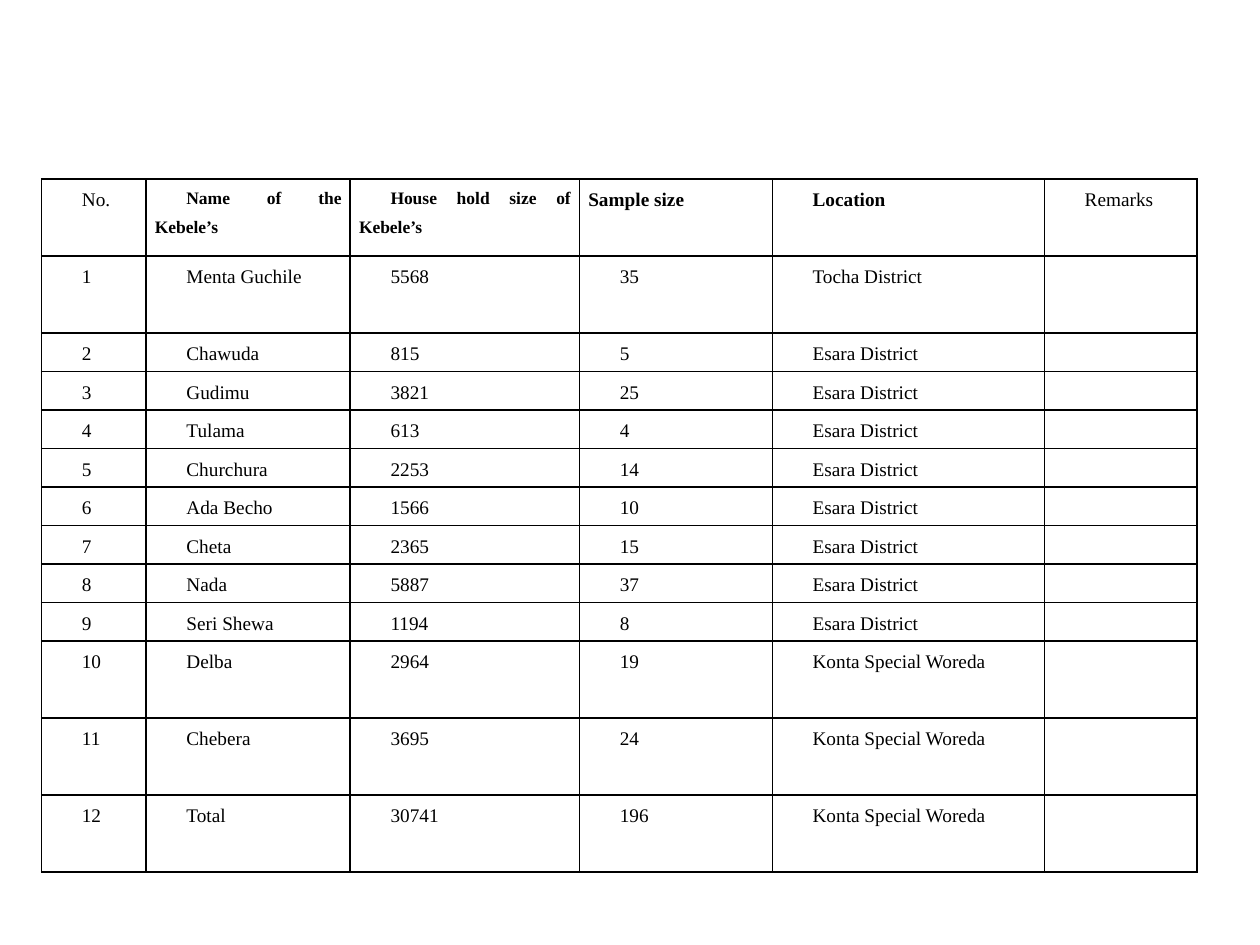
"""Build a slide with the table of sampled kebeles."""
from pptx import Presentation
from pptx import util as u
from pptx.dml.color import RGBColor
from pptx.enum import text
from pptx.oxml import parse_xml
from pptx.oxml.ns import nsdecls

BLACK = RGBColor(0, 0, 0)
FONT = "Times New Roman"
ESARA, KONTA = "Esara District", "Konta Special Woreda"

HEADS = [
    ("No.", 11, False, 0.25),
    ("Name of the Kebele’s", 10, True, 0.25),
    ("House hold size of Kebele’s", 10, True, 0.25),
    ("Sample size", 11, True, 0),
    ("Location", 11, True, 0.25),
    ("Remarks", 11, False, 0.25),
]
ROWS = [
    ("Menta Guchile", 5568, 35, "Tocha District"),
    ("Chawuda", 815, 5, ESARA),
    ("Gudimu", 3821, 25, ESARA),
    ("Tulama", 613, 4, ESARA),
    ("Churchura", 2253, 14, ESARA),
    ("Ada Becho", 1566, 10, ESARA),
    ("Cheta", 2365, 15, ESARA),
    ("Nada", 5887, 37, ESARA),
    ("Seri Shewa", 1194, 8, ESARA),
    ("Delba", 2964, 19, KONTA),
    ("Chebera", 3695, 24, KONTA),
    ("Total", 30741, 196, KONTA),
]
WIDTHS = [0.83, 1.62, 1.82, 1.53, 2.16, 1.21]
SPANS = [1 if row[3] == ESARA else 2 for row in ROWS]
LEFT, TOP, HIGH = 0.33, 1.42, 5.5


def frame(cell):
    """Draw the cell's four borders, clear its fill and set its margins."""
    props = cell._tc.get_or_add_tcPr()
    for side in "LRTB":
        props.append(parse_xml(
            f'<a:ln{side} {nsdecls("a")} w="{u.Pt(1)}"><a:solidFill>'
            f'<a:srgbClr val="{BLACK}"/></a:solidFill></a:ln{side}>'))
    cell.fill.background()
    cell.margin_left = cell.margin_right = u.Inches(0.07)
    cell.margin_top = cell.margin_bottom = 0


def write(cell, words, size=11, bold=False, indent=0.25):
    """Put one justified line of text in the cell."""
    para = cell.text_frame.paragraphs[0]
    para.text = str(words)
    para.alignment = text.PP_ALIGN.JUSTIFY
    para.line_spacing = 1.5
    para._p.get_or_add_pPr().set("indent", str(u.Inches(indent)))
    font = para.font
    font.name, font.size, font.bold = FONT, u.Pt(size), bold
    font.color.rgb = BLACK


def main():
    deck = Presentation()
    deck.slide_width, deck.slide_height = u.Inches(10), u.Inches(7.5)
    slide = deck.slides.add_slide(deck.slide_layouts[6])
    table = slide.shapes.add_table(
        len(ROWS) + 1, len(HEADS), u.Inches(LEFT), u.Inches(TOP),
        u.Inches(sum(WIDTHS)), u.Inches(HIGH)).table
    table.first_row = table.horz_banding = False

    for col, width in zip(table.columns, WIDTHS):
        col.width = u.Inches(width)
    spans = [2] + SPANS
    for row, span in zip(table.rows, spans):
        row.height = u.Inches(HIGH * span / sum(spans))
    for cell in table.iter_cells():
        frame(cell)

    for col, head in enumerate(HEADS):
        write(table.cell(0, col), *head)
    for num, row in enumerate(ROWS, 1):
        for col, words in enumerate((num, *row)):
            write(table.cell(num, col), words)
    deck.save("out.pptx")


if __name__ == "__main__":
    main()
